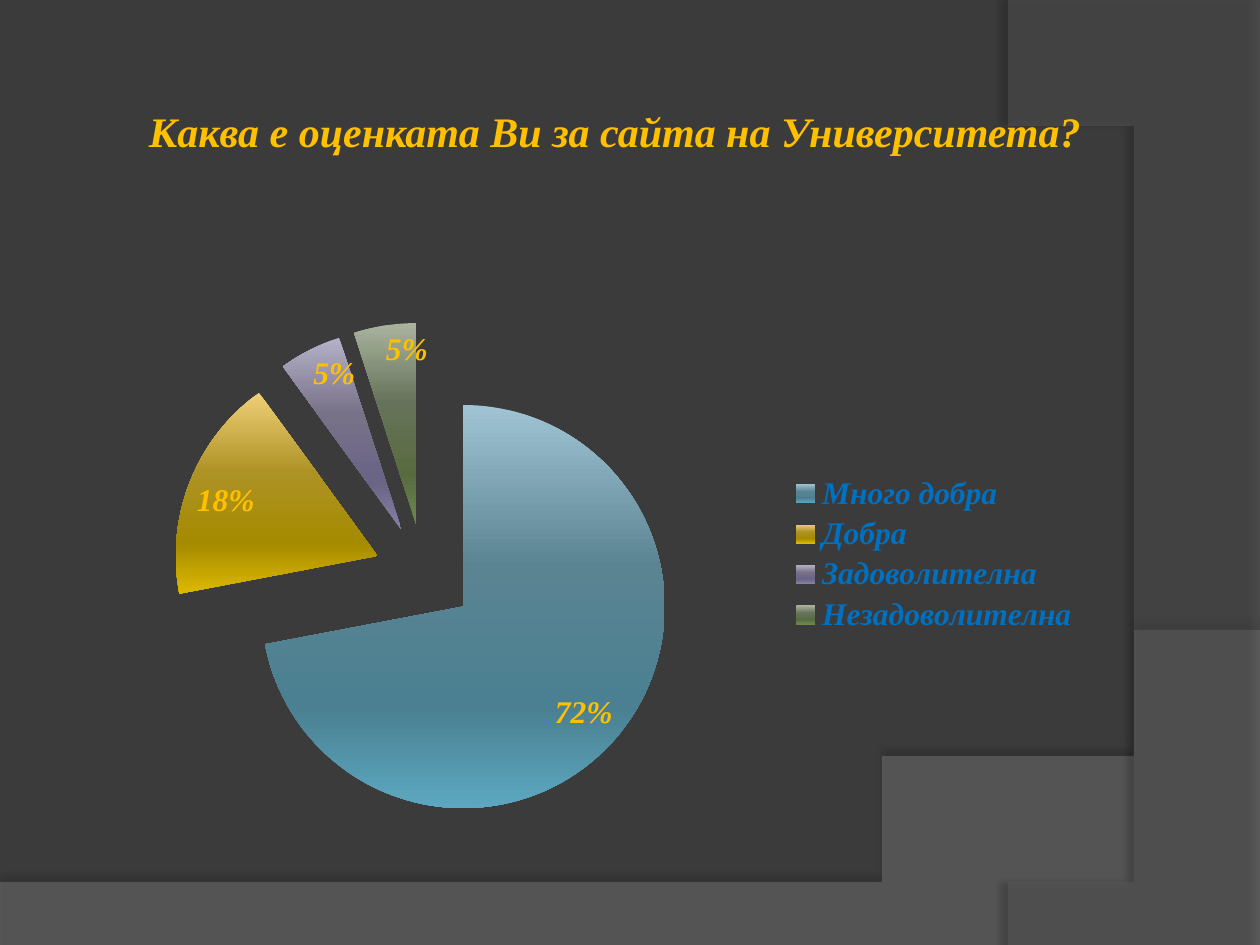
from dataclasses import dataclass

from pptx import Presentation
from pptx.chart.data import CategoryChartData
from pptx.dml.color import RGBColor
from pptx.enum.chart import XL_CHART_TYPE, XL_LABEL_POSITION, XL_LEGEND_POSITION
from pptx.enum.text import MSO_ANCHOR, PP_ALIGN
from pptx.oxml import parse_xml
from pptx.oxml.ns import nsdecls
from pptx.util import Emu, Inches, Pt

PIE = XL_CHART_TYPE.PIE_EXPLODED
LEGEND_RIGHT = XL_LEGEND_POSITION.RIGHT
INSIDE_END = XL_LABEL_POSITION.INSIDE_END
MIDDLE = MSO_ANCHOR.MIDDLE
CENTER = PP_ALIGN.CENTER

WIDTH, HEIGHT = Inches(10), Inches(7.5)
CURVE_STEPS = 40
EXPLOSION = 25
GRADIENT_STOPS = (0, 40, 75, 100)

Point = tuple[float, float]


@dataclass(frozen=True)
class Theme:
    background: str = "3B3B3B"
    accent: str = "FFC000"
    legend: str = "0070C0"
    chart_text: str = "FFFFFF"
    shadow: str = "000000"
    font: str = "Times New Roman"
    chart_font: str = "Arial"
    title_size: int = 24
    chart_size: int = 18


@dataclass(frozen=True)
class Box:
    left: float
    top: float
    width: float
    height: float

    def place(self) -> tuple[Emu, Emu, Emu, Emu]:
        return (Emu(int(self.left * WIDTH)), Emu(int(self.top * HEIGHT)),
                Emu(int(self.width * WIDTH)), Emu(int(self.height * HEIGHT)))


@dataclass(frozen=True)
class Wave:
    before: tuple[Point, ...]
    curve: tuple[Point, Point, Point, Point]
    color: str
    opacity: int
    shadow_opacity: int
    shadow_distance: float
    shadow_angle: int


@dataclass(frozen=True)
class Answer:
    label: str
    percent: int
    shades: tuple[str, str, str, str]


THEME = Theme()
TITLE = "Каква е оценката Ви за сайта на Университета?"
TITLE_BOX = Box(0.051, 0.08, 0.874, 0.167)
CHART_BOX = Box(0.05, 0.28, 0.817, 0.613)
PLOT_BOX = Box(0.106, 0.1, 0.49, 0.87)

WAVES = (
    Wave(((0, 7.05), (0, 7.5), (10, 7.5)),
         ((10, 5.2), (5.59, 7.29), (3.91, 7.19), (0, 7.05)),
         "7F7F7F", 45, 35, 3.5, 270),
    Wave(((10, 0.02), (10, 7.5)),
         ((8.21, 7.5), (9.35, 6.19), (10.18, 3), (8, 0)),
         "5E5E5E", 40, 45, 4, 180),
)

ANSWERS = (
    Answer("Много добра", 72, ("A0C4D4", "5B8492", "4A8092", "5CA8C0")),
    Answer("Добра", 18, ("F0CF78", "AD9224", "A58B00", "DDB900")),
    Answer("Задоволителна", 5, ("B5B1C8", "777288", "6A6485", "8782A6")),
    Answer("Незадоволителна", 5, ("A9B39E", "66735A", "586B40", "6C8850")),
)


def bezier(curve: tuple[Point, Point, Point, Point], t: float) -> Point:
    weights = ((1 - t) ** 3, 3 * t * (1 - t) ** 2, 3 * t * t * (1 - t), t ** 3)
    x, y = (sum(w * p[axis] for w, p in zip(weights, curve)) for axis in (0, 1))
    return x, y


def draw_wave(slide, wave: Wave) -> None:
    curve = [bezier(wave.curve, i / CURVE_STEPS) for i in range(CURVE_STEPS + 1)]
    first, *rest = [*wave.before, *curve]
    builder = slide.shapes.build_freeform(*first, scale=Inches(1))
    builder.add_line_segments(rest, close=True)
    band = builder.convert_to_shape()
    band.fill.solid()
    band.fill.fore_color.rgb = RGBColor.from_string(wave.color)
    band.line.fill.background()
    band.shadow.inherit = False
    fill_color = band._element.xpath("./p:spPr/a:solidFill/a:srgbClr")[0]
    fill_color.append(parse_xml(f'<a:alpha {nsdecls("a")} val="{wave.opacity * 1000}"/>'))
    effects = band._element.xpath("./p:spPr/a:effectLst")[0]
    effects.append(parse_xml(
        f'<a:outerShdw {nsdecls("a")} blurRad="{Pt(4)}" dist="{Pt(wave.shadow_distance)}" '
        f'dir="{wave.shadow_angle * 60000}" algn="ctr" rotWithShape="0">'
        f'<a:srgbClr val="{THEME.shadow}"><a:alpha val="{wave.shadow_opacity * 1000}"/>'
        f'</a:srgbClr></a:outerShdw>'))


def style_font(font, color: str, size: int, name: str = THEME.font,
               emphasis: bool = True) -> None:
    font.name = name
    font.size = Pt(size)
    font.bold = font.italic = emphasis
    font.color.rgb = RGBColor.from_string(color)


def draw_title(slide) -> None:
    frame = slide.shapes.add_textbox(*TITLE_BOX.place()).text_frame
    frame.word_wrap = True
    frame.vertical_anchor = MIDDLE
    frame.margin_left = frame.margin_right = frame.margin_top = Inches(0.05)
    frame.margin_bottom = Inches(0.42)
    heading = frame.paragraphs[0]
    heading.text = TITLE
    heading.alignment = CENTER
    style_font(heading.font, THEME.accent, THEME.title_size)


def paint_slices(chart) -> None:
    points = chart.plots[0].series[0].points
    for index in range(len(ANSWERS)):
        fill = points[index].format.fill
        fill.gradient()
        fill.gradient_angle = 270
        points[index].format.line.fill.background()
    for answer, slice_xml in zip(ANSWERS, chart._chartSpace.xpath(".//c:dPt")):
        for old in slice_xml.xpath("./c:explosion"):
            slice_xml.remove(old)
        slice_xml.xpath("./c:spPr")[0].addprevious(
            parse_xml(f'<c:explosion {nsdecls("c")} val="{EXPLOSION}"/>'))
        stops = slice_xml.xpath(".//a:gsLst")[0]
        for old in list(stops):
            stops.remove(old)
        for position, shade in zip(GRADIENT_STOPS, answer.shades):
            stops.append(parse_xml(
                f'<a:gs {nsdecls("a")} pos="{position * 1000}"><a:srgbClr val="{shade}"/></a:gs>'))


def place_plot(chart) -> None:
    area = chart._chartSpace.xpath(".//c:plotArea")[0]
    for old in area.xpath("./c:layout"):
        area.remove(old)
    area.insert(0, parse_xml(
        f'<c:layout {nsdecls("c")}><c:manualLayout><c:layoutTarget val="inner"/>'
        f'<c:xMode val="edge"/><c:yMode val="edge"/>'
        f'<c:x val="{PLOT_BOX.left}"/><c:y val="{PLOT_BOX.top}"/>'
        f'<c:w val="{PLOT_BOX.width}"/><c:h val="{PLOT_BOX.height}"/>'
        f'</c:manualLayout></c:layout>'))


def draw_chart(slide) -> None:
    data = CategoryChartData(number_format="0")
    data.categories = [answer.label for answer in ANSWERS]
    data.add_series("Series 1", [answer.percent for answer in ANSWERS])
    chart = slide.shapes.add_chart(PIE, *CHART_BOX.place(), data).chart
    style_font(chart.font, THEME.chart_text, THEME.chart_size, THEME.chart_font, False)
    chart.has_title = False
    chart.has_legend = True
    chart.legend.position = LEGEND_RIGHT
    chart.legend.include_in_layout = False
    style_font(chart.legend.font, THEME.legend, THEME.chart_size)

    plot = chart.plots[0]
    plot.vary_by_categories = True
    labels = plot.series[0].data_labels
    labels.show_value = False
    labels.show_percentage = True
    labels.number_format = "0%"
    labels.number_format_is_linked = False
    labels.position = INSIDE_END
    style_font(labels.font, THEME.accent, THEME.chart_size)
    paint_slices(chart)
    place_plot(chart)


def main() -> None:
    deck = Presentation()
    deck.slide_width, deck.slide_height = WIDTH, HEIGHT
    slide = deck.slides.add_slide(deck.slide_layouts[6])
    slide.background.fill.solid()
    slide.background.fill.fore_color.rgb = RGBColor.from_string(THEME.background)
    for wave in WAVES:
        draw_wave(slide, wave)
    draw_title(slide)
    draw_chart(slide)
    deck.save("out.pptx")


if __name__ == "__main__":
    main()
